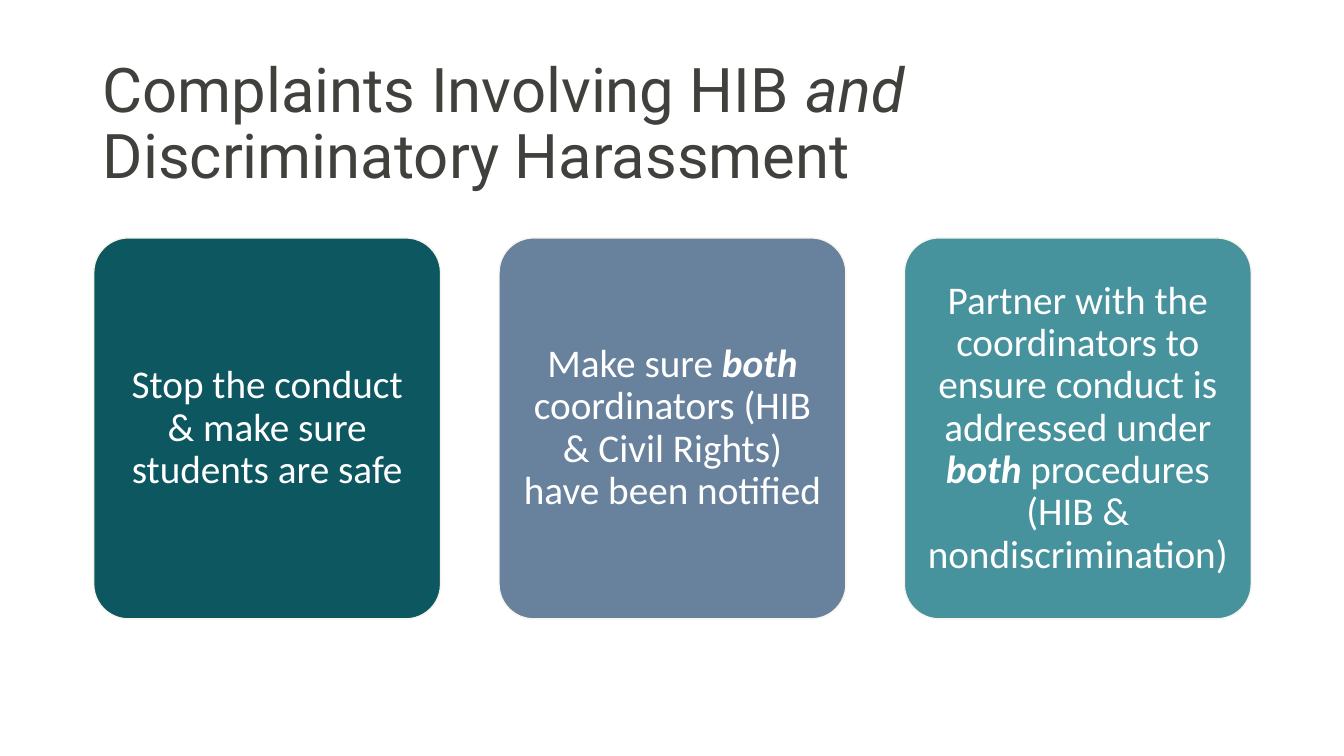
from pptx import Presentation
from pptx.dml.color import RGBColor
from pptx.enum.shapes import MSO_SHAPE
from pptx.enum.text import MSO_ANCHOR, PP_ALIGN
from pptx.util import Inches, Pt

COLORS = {
    "title": "40403D",
    "text": "FFFFFF",
    "outline": "F7F5EB",
    "stop": "0D5761",
    "notify": "68829E",
    "partner": "46929D",
}

TITLE = [
    ("Complaints Involving HIB ", ""),
    ("and ", "i"),
    ("Discriminatory Harassment", ""),
]

CARDS = [
    ("stop", [("Stop the conduct & make sure students are safe", "")]),
    ("notify", [
        ("Make sure ", ""),
        ("both", "bi"),
        (" coordinators (HIB & Civil Rights) have been notified", ""),
    ]),
    ("partner", [
        ("Partner with the coordinators to ensure conduct is addressed under ", ""),
        ("both", "bi"),
        (" procedures (HIB & nondiscrimination)", ""),
    ]),
]

CARD_LEFT, CARD_TOP = 0.93, 2.36
CARD_WIDTH, CARD_HEIGHT = 3.44, 3.78
CARD_STEP = 4.02


def color(name):
    return RGBColor.from_string(COLORS[name])


def write_text(shape, spans, *, font, size, fill, align, margin_x, margin_y):
    frame = shape.text_frame
    frame.word_wrap = True
    frame.vertical_anchor = MSO_ANCHOR.MIDDLE
    frame.margin_left = frame.margin_right = Inches(margin_x)
    frame.margin_top = frame.margin_bottom = Inches(margin_y)
    para = frame.paragraphs[0]
    para.alignment = align
    para.line_spacing = 0.9
    for text, style in spans:
        span = para.add_run()
        span.text = text
        span.font.name = font
        span.font.size = Pt(size)
        span.font.bold = "b" in style
        span.font.italic = "i" in style
        span.font.color.rgb = color(fill)


def add_title(page):
    box = page.shapes.add_textbox(Inches(0.92), Inches(0.55), Inches(11.5), Inches(1.39))
    write_text(box, TITLE, font="Roboto", size=44, fill="title",
               align=PP_ALIGN.LEFT, margin_x=0.1, margin_y=0.05)


def add_card(page, left, fill, spans):
    card = page.shapes.add_shape(
        MSO_SHAPE.ROUNDED_RECTANGLE,
        Inches(left), Inches(CARD_TOP), Inches(CARD_WIDTH), Inches(CARD_HEIGHT))
    card.adjustments[0] = 0.1
    card.shadow.inherit = False
    card.fill.solid()
    card.fill.fore_color.rgb = color(fill)
    card.line.color.rgb = color("outline")
    card.line.width = Pt(1)
    write_text(card, spans, font="Calibri", size=28, fill="text",
               align=PP_ALIGN.CENTER, margin_x=0.12, margin_y=0.12)


def main():
    deck = Presentation()
    deck.slide_width = Inches(13.33)
    deck.slide_height = Inches(7.5)
    page = deck.slides.add_slide(deck.slide_layouts[6])
    add_title(page)
    for index, (fill, spans) in enumerate(CARDS):
        add_card(page, CARD_LEFT + index * CARD_STEP, fill, spans)
    deck.save("out.pptx")


if __name__ == "__main__":
    main()
